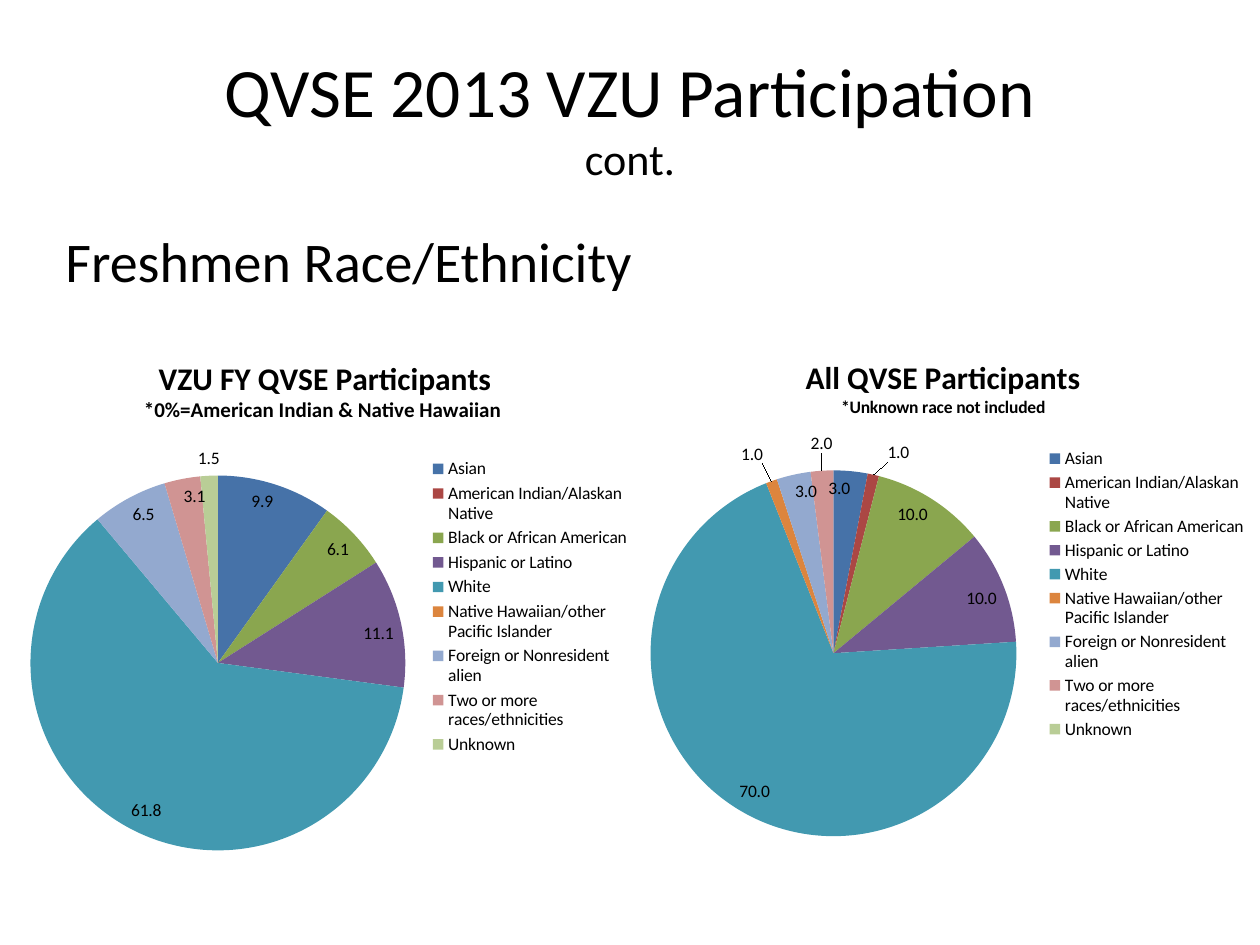
"""Build the freshmen race and ethnicity slide with two pie charts."""
import pptx
import pptx.chart.data
import pptx.dml.color
import pptx.enum.chart
import pptx.enum.text
import pptx.oxml
import pptx.oxml.ns
import pptx.util

FONT, BLACK, NUMBER = "Calibri", "000000", "###0.0;;"
HEADING = [("QVSE 2013 VZU Participation", 39.6), ("cont.", 25.2)]
TOPIC = "Freshmen Race/Ethnicity"
GROUPS = [
    ("Asian", "4672A8"),
    ("American Indian/Alaskan Native", "AB4744"),
    ("Black or African American", "8AA64F"),
    ("Hispanic or Latino", "725990"),
    ("White", "4299B0"),
    ("Native Hawaiian/other Pacific Islander", "DC853E"),
    ("Foreign or Nonresident alien", "93A9CF"),
    ("Two or more races/ethnicities", "D09493"),
    ("Unknown", "B9CD96"),
]
PIES = [
    dict(title=[("VZU FY QVSE Participants", 18),
                ("*0%=American Indian & Native Hawaiian ", 12)],
         values=[9.9, 0, 6.1, 11.1, 61.8, 0, 6.5, 3.1, 1.5],
         box=(0.08, 2.67, 5, 4.25), plot=(0.03, 0.26, 0.6, 0.7),
         legend=(0.66, 0.22, 0.33, 0.57), outside={8: (0, 0)}),
    dict(title=[("All QVSE Participants", 18),
                ("*Unknown race not included", 10)],
         values=[3, 1, 10, 10, 70, 1, 3, 2, 0],
         box=(5, 2.67, 4.97, 4.09), plot=(0.03, 0.26, 0.59, 0.71),
         legend=(0.66, 0.21, 0.33, 0.58),
         outside={1: (0.02, -0.01), 5: (-0.01, -0.02), 7: (0, -0.02)}),
]


def rgb(value):
    return pptx.dml.color.RGBColor.from_string(value)


def style(font, size, bold=False):
    font.name, font.size, font.bold = FONT, pptx.util.Pt(size), bold
    font.color.rgb = rgb(BLACK)


def chart_xml(body):
    return pptx.oxml.parse_xml(body.replace(
        ">", f" {pptx.oxml.ns.nsdecls('c')}>", 1))


def layout(box, absolute=True, inner=False):
    parts = [("layoutTarget", "inner")] if inner else []
    if absolute:
        parts += [("xMode", "edge"), ("yMode", "edge")]
    parts += zip("xywh", box)
    tags = "".join(f'<c:{tag} val="{val}"/>' for tag, val in parts)
    return chart_xml(f"<c:layout><c:manualLayout>{tags}</c:manualLayout></c:layout>")


def set_layout(parent, new, index):
    for old in parent.findall(pptx.oxml.ns.qn("c:layout")):
        parent.remove(old)
    parent.insert(index, new)


def add_text(slide, box, anchor):
    sp = slide.shapes.add_textbox(*map(pptx.util.Inches, box))
    tf = sp.text_frame
    tf.word_wrap, tf.vertical_anchor = True, anchor
    return tf.paragraphs[0]


def add_pie(slide, pie):
    data = pptx.chart.data.CategoryChartData(number_format="0.0")
    data.categories = [name for name, _ in GROUPS]
    data.add_series("Series 1", pie["values"])
    chart = slide.shapes.add_chart(
        pptx.enum.chart.XL_CHART_TYPE.PIE,
        *map(pptx.util.Inches, pie["box"]), data).chart
    style(chart.font, 10)

    chart.has_title = True
    tf = chart.chart_title.text_frame
    for i, (text, size) in enumerate(pie["title"]):
        p = tf.add_paragraph() if i else tf.paragraphs[0]
        r = p.add_run()
        r.text = text
        style(r.font, size, True)

    chart.has_legend = True
    legend = chart.legend
    legend.position = pptx.enum.chart.XL_LEGEND_POSITION.RIGHT
    legend.include_in_layout = False
    style(legend.font, 10)
    set_layout(legend._element, layout(pie["legend"]), 1)
    set_layout(chart._chartSpace.chart.plotArea, layout(pie["plot"], inner=True), 0)

    plot = chart.plots[0]
    plot.vary_by_categories = True
    series = plot.series[0]
    for i, (_, color) in enumerate(GROUPS):
        fill = series.points[i].format.fill
        fill.solid()
        fill.fore_color.rgb = rgb(color)

    positions = pptx.enum.chart.XL_LABEL_POSITION
    labels = series.data_labels
    labels.show_value = True
    labels.number_format, labels.number_format_is_linked = NUMBER, False
    labels.position = positions.INSIDE_END
    style(labels.font, 10)
    for i, shift in pie["outside"].items():
        label = series.points[i].data_label
        style(label.font, 10)
        label.position = positions.OUTSIDE_END
        dLbl = labels._element.xpath(f"c:dLbl[c:idx/@val='{i}']")[0]
        set_layout(dLbl, layout(shift, absolute=False), 1)
        dLbl.insert(2, chart_xml(
            f'<c:numFmt formatCode="{NUMBER}" sourceLinked="0"></c:numFmt>'))


def main():
    prs = pptx.Presentation()
    prs.slide_width, prs.slide_height = pptx.util.Inches(10), pptx.util.Inches(7.5)
    slide = prs.slides.add_slide(prs.slide_layouts[6])
    anchors = pptx.enum.text.MSO_ANCHOR

    p = add_text(slide, (0.5, 0.3, 9, 1.25), anchors.MIDDLE)
    p.alignment = pptx.enum.text.PP_ALIGN.CENTER
    for i, (text, size) in enumerate(HEADING):
        if i:
            p.add_line_break()
        r = p.add_run()
        r.text = text
        style(r.font, size)

    p = add_text(slide, (0.42, 1.75, 9.42, 5.42), anchors.TOP)
    p.text = TOPIC
    style(p.font, 32)

    for pie in PIES:
        add_pie(slide, pie)
    prs.save("out.pptx")


if __name__ == "__main__":
    main()
